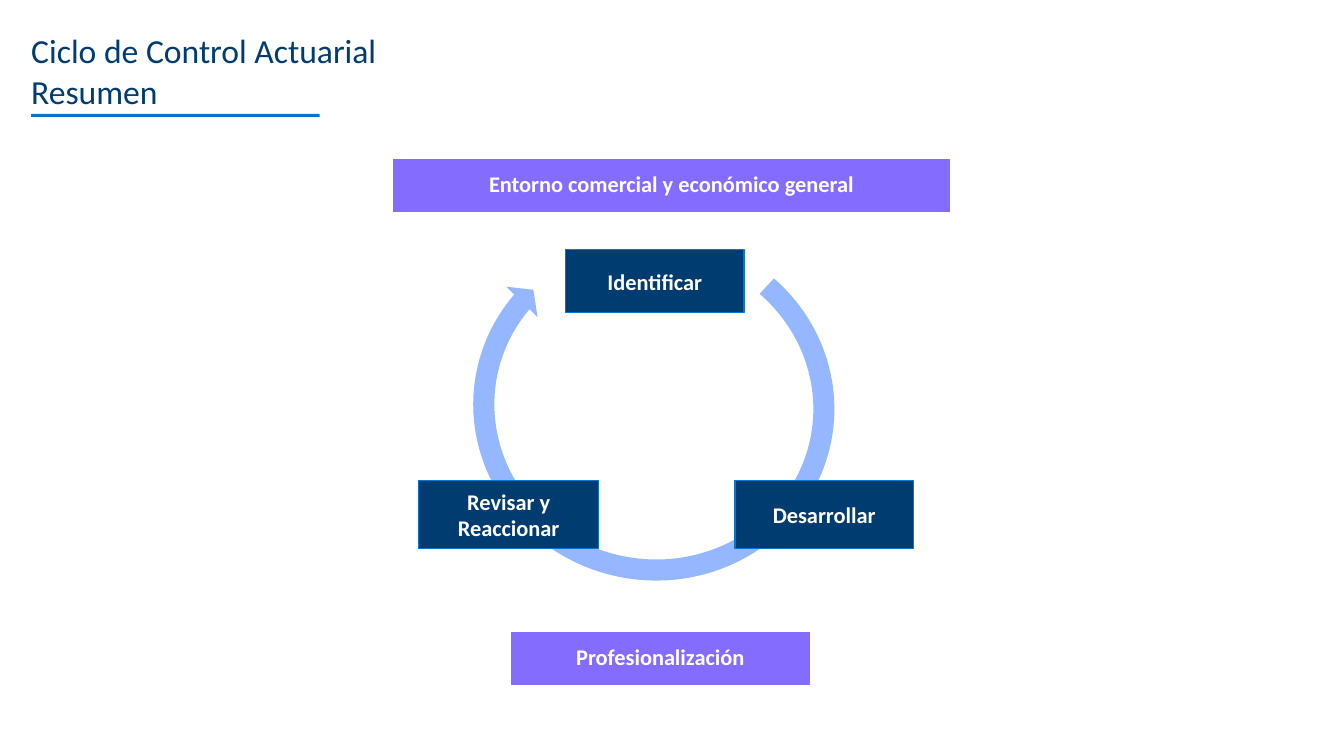
import pptx
import pptx.util
import pptx.dml.color
import pptx.enum.shapes
import pptx.enum.text

Inches = pptx.util.Inches
Pt = pptx.util.Pt
SHAPE = pptx.enum.shapes.MSO_SHAPE
NAVY, BLUE, PURPLE, LIGHT_BLUE, WHITE = "003C70", "0077D4", "846CFF", "94B7FF", "FFFFFF"


def color(hex_code):
    return pptx.dml.color.RGBColor.from_string(hex_code)


def add_filled(kind, left, top, width, height, fill, line=None):
    """Add a shadowless shape, outlined only when a line colour is given."""
    sp = s.shapes.add_shape(kind, Inches(left), Inches(top), Inches(width), Inches(height))
    sp.shadow.inherit = False
    sp.fill.solid()
    sp.fill.fore_color.rgb = color(fill)
    if line:
        sp.line.color.rgb = color(line)
        sp.line.width = Pt(0.75)
    else:
        sp.line.fill.background()
    return sp


prs = pptx.Presentation()
prs.slide_width, prs.slide_height = Inches(13.33), Inches(7.5)
s = prs.slides.add_slide(prs.slide_layouts[5])

# Title and its underline
title = s.shapes.title
title.left, title.top = Inches(0.31), Inches(0.3)
title.width, title.height = Inches(12.7), Inches(0.67)
tf = title.text_frame
tf.margin_left = tf.margin_top = tf.margin_right = tf.margin_bottom = 0
tf.vertical_anchor = pptx.enum.text.MSO_ANCHOR.TOP
tf.auto_size = pptx.enum.text.MSO_AUTO_SIZE.NONE
tf.word_wrap = True
p = tf.paragraphs[0]
p.alignment = pptx.enum.text.PP_ALIGN.LEFT
p.add_run().text = "Ciclo de Control Actuarial"
p.add_line_break()
p.add_run().text = "Resumen"
p.font.name = "Calibri"
p.font.size = Pt(24)
p.font.color.rgb = color(NAVY)
add_filled(SHAPE.RECTANGLE, 0.31, 1.13, 2.86, 0.03, BLUE)

# Cycle arrow
cycle = add_filled(SHAPE.CIRCULAR_ARROW, 4.58, 2.2, 3.81, 3.67, LIGHT_BLUE)
cycle.rotation = 9.8
for i, value in enumerate([0.057, 3.405, 125.2, 182.001, 0.059]):
    cycle.adjustments[i] = value

# Context bars and cycle steps: text, left, top, width, height, fill, line, line spacing
boxes = [
    ("Entorno comercial y económico general", 3.9, 1.58, 5.52, 0.52, PURPLE, PURPLE, 0.9),
    ("Profesionalización", 5.07, 6.27, 2.96, 0.52, PURPLE, PURPLE, 0.9),
    ("Identificar", 5.61, 2.48, 1.77, 0.62, NAVY, BLUE, 1.0),
    ("Desarrollar", 7.29, 4.77, 1.77, 0.67, NAVY, BLUE, 1.0),
    ("Revisar y Reaccionar", 4.15, 4.77, 1.79, 0.67, NAVY, BLUE, 1.0),
]
for text, left, top, width, height, fill, line, spacing in boxes:
    sp = add_filled(SHAPE.RECTANGLE, left, top, width, height, fill, line)
    tf = sp.text_frame
    tf.word_wrap = True
    tf.vertical_anchor = pptx.enum.text.MSO_ANCHOR.MIDDLE
    p = tf.paragraphs[0]
    p.text = text
    p.alignment = pptx.enum.text.PP_ALIGN.CENTER
    p.line_spacing = spacing
    p.font.name = "Calibri"
    p.font.size = Pt(16)
    p.font.bold = True
    p.font.color.rgb = color(WHITE)

prs.save("out.pptx")
